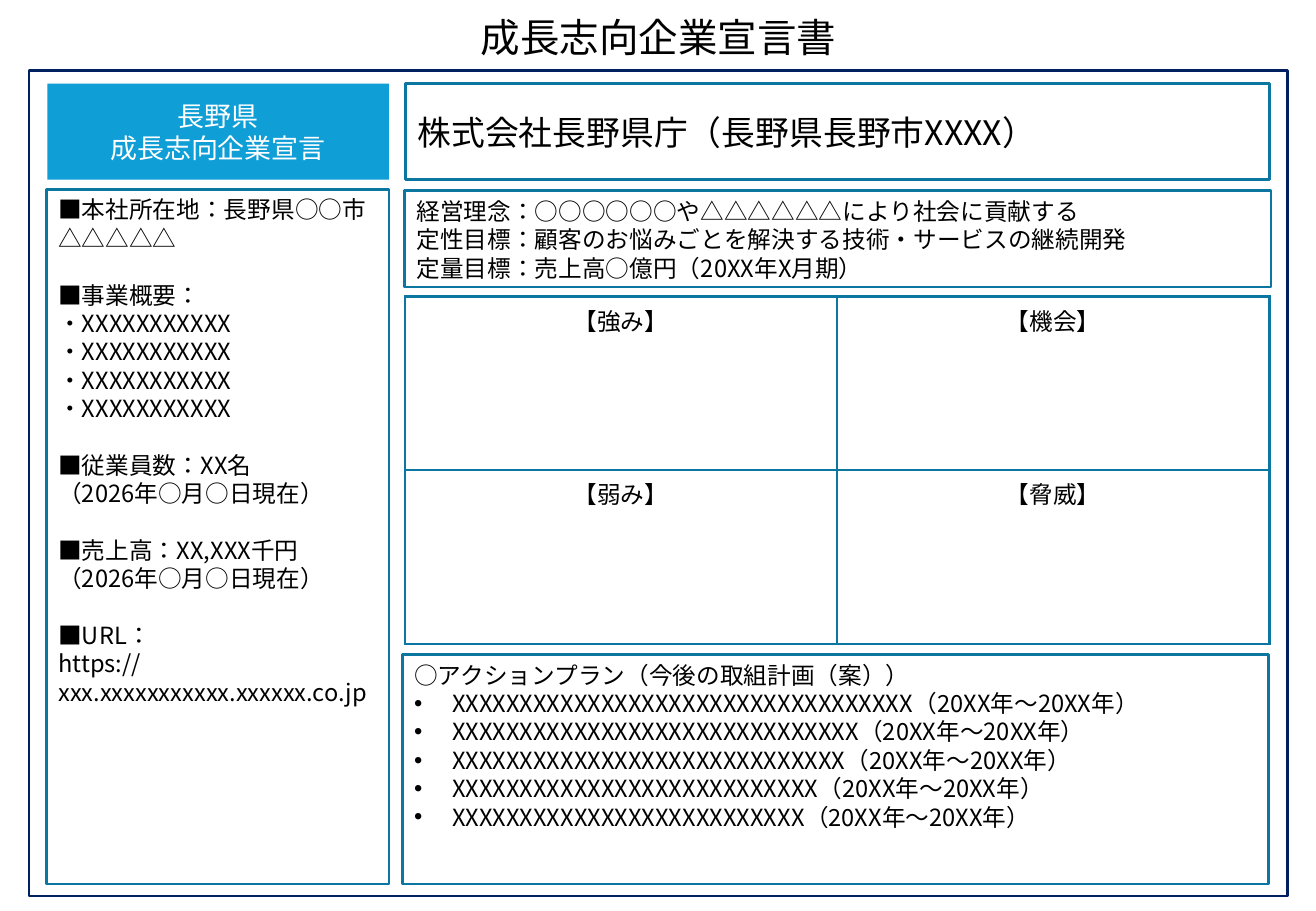
from lxml.etree import SubElement
from pptx import Presentation
from pptx.dml.color import RGBColor
from pptx.enum.shapes import MSO_SHAPE as Shape
from pptx.enum.text import MSO_ANCHOR as Anchor, MSO_AUTO_SIZE as AutoSize, PP_ALIGN as Align
from pptx.oxml.ns import qn
from pptx.util import Cm, Pt

FONT = "Noto Sans CJK JP"
BLACK = RGBColor(0x00, 0x00, 0x00)
WHITE = RGBColor(0xFF, 0xFF, 0xFF)
NAVY = RGBColor(0x00, 0x20, 0x60)
TEAL = RGBColor(0x0B, 0x76, 0xA0)
SKY = RGBColor(0x0F, 0x9E, 0xD5)
BODY = 14
LINE_RATIO = 1.2
BORDER = Pt(1.5)


class DeclarationSheet:
    """Style of the sheet and the slide being filled."""

    def __init__(self, deck):
        self.slide = deck.slides.add_slide(deck.slide_layouts[5])

    def add_text(self, paragraph, text, size=BODY, color=BLACK, align=Align.LEFT):
        paragraph.alignment = align
        run = paragraph.add_run()
        run.text = text
        run.font.name = FONT
        run.font.size = Pt(size)
        run.font.color.rgb = color
        properties = run._r.get_or_add_rPr()
        properties.set("lang", "ja-JP")
        SubElement(properties, qn("a:ea"), typeface=FONT)

    def title(self, text, left, top, width, height):
        title = self.slide.shapes.title
        title.left, title.top, title.width, title.height = map(Cm, (left, top, width, height))
        frame = title.text_frame
        frame.auto_size = AutoSize.NONE
        frame.vertical_anchor = Anchor.MIDDLE
        frame.paragraphs[0].line_spacing = 0.8
        self.add_text(frame.paragraphs[0], text, 23.4, align=Align.CENTER)

    def box(self, left, top, width, height, fill=None, line=TEAL, anchor=Anchor.TOP):
        box = self.slide.shapes.add_shape(
            Shape.RECTANGLE, Cm(left), Cm(top), Cm(width), Cm(height))
        box.shadow.inherit = False
        if fill is None:
            box.fill.background()
        else:
            box.fill.solid()
            box.fill.fore_color.rgb = fill
        if line is None:
            box.line.fill.background()
        else:
            box.line.color.rgb = line
            box.line.width = BORDER
        box.text_frame.word_wrap = True
        box.text_frame.vertical_anchor = anchor
        return box.text_frame

    def paragraphs(self, frame, groups, size=BODY, color=BLACK, align=Align.LEFT, bulleted=False):
        """Fill in groups of lines, one line's height apart; bullets start at the second group."""
        pitch = Pt(size * LINE_RATIO)
        for group_index, group in enumerate(groups):
            for line_index, text in enumerate(group):
                first = group_index == line_index == 0
                paragraph = frame.paragraphs[0] if first else frame.add_paragraph()
                paragraph.line_spacing = pitch
                if bulleted and group_index:
                    self.bullet(paragraph)
                elif group_index and line_index == 0:
                    paragraph.space_before = pitch
                self.add_text(paragraph, text, size, color, align)

    def bullet(self, paragraph):
        indent = Cm(0.79)
        properties = paragraph._p.get_or_add_pPr()
        properties.set("marL", str(indent))
        properties.set("indent", str(-indent))
        SubElement(properties, qn("a:buFont"), typeface="Arial")
        SubElement(properties, qn("a:buChar"), char="•")

    def grid(self, rows, left, top, column_width, row_height):
        table = self.slide.shapes.add_table(
            len(rows), len(rows[0]), Cm(left), Cm(top),
            Cm(column_width * len(rows[0])), Cm(row_height * len(rows))).table
        table.first_row = table.horz_banding = False
        for row, labels in zip(table.rows, rows):
            row.height = Cm(row_height)
            for cell, label in zip(row.cells, labels):
                self.add_text(cell.text_frame.paragraphs[0], label, align=Align.CENTER)
                self.borders(cell)
        for column in table.columns:
            column.width = Cm(column_width)

    def borders(self, cell):
        properties = cell._tc.get_or_add_tcPr()
        for side in ("lnL", "lnR", "lnT", "lnB"):
            line = SubElement(properties, qn(f"a:{side}"), w=str(BORDER))
            SubElement(SubElement(line, qn("a:solidFill")), qn("a:srgbClr"), val=str(TEAL))
        cell.fill.background()
        # The fill has to follow the border lines
        properties.append(properties.find(qn("a:noFill")))


def main():
    deck = Presentation()
    deck.slide_width, deck.slide_height = Cm(27.51), Cm(19.05)
    sheet = DeclarationSheet(deck)

    # Title and outer frame
    sheet.title("成長志向企業宣言書", 0.61, 0.3, 26.31, 1.12)
    sheet.box(0.61, 1.47, 26.31, 17.27, line=NAVY)

    # Heading row: programme and company name
    programme = sheet.box(0.99, 1.75, 7.14, 2.01, fill=SKY, line=None, anchor=Anchor.MIDDLE)
    sheet.paragraphs(programme, [["長野県", "成長志向企業宣言"]], 16, WHITE, Align.CENTER)
    company = sheet.box(8.48, 1.75, 18.06, 2.01, anchor=Anchor.MIDDLE)
    sheet.add_text(company.paragraphs[0], "株式会社長野県庁（長野県長野市XXXX）", 20)

    # Company profile
    as_of = "（2026年○月○日現在）"
    profile = sheet.box(0.97, 3.96, 7.16, 14.53)
    sheet.paragraphs(profile, [
        ["■本社所在地：長野県○○市△△△△△"],
        ["■事業概要："] + ["・XXXXXXXXXXX"] * 4,
        ["■従業員数：XX名", as_of],
        ["■売上高：XX,XXX千円", as_of],
        ["■URL：", "https://xxx.xxxxxxxxxxx.xxxxxx.co.jp"],
    ])

    # Philosophy and goals
    goals = sheet.box(8.46, 3.99, 18.11, 2.01)
    sheet.paragraphs(goals, [[
        "経営理念：○○○○○○や△△△△△△により社会に貢献する",
        "定性目標：顧客のお悩みごとを解決する技術・サービスの継続開発",
        "定量目標：売上高○億円（20XX年X月期）",
    ]])

    # SWOT table
    sheet.grid([["【強み】", "【機会】"], ["【弱み】", "【脅威】"]], 8.46, 6.2, 9.04, 3.63)

    # Action plan
    plan = sheet.box(8.41, 13.69, 18.11, 4.8)
    actions = ["X" * length + "（20XX年～20XX年）" for length in (34, 30, 29, 27, 26)]
    sheet.paragraphs(plan, [["○アクションプラン（今後の取組計画（案））"], actions], bulleted=True)

    deck.save("out.pptx")


if __name__ == "__main__":
    main()
